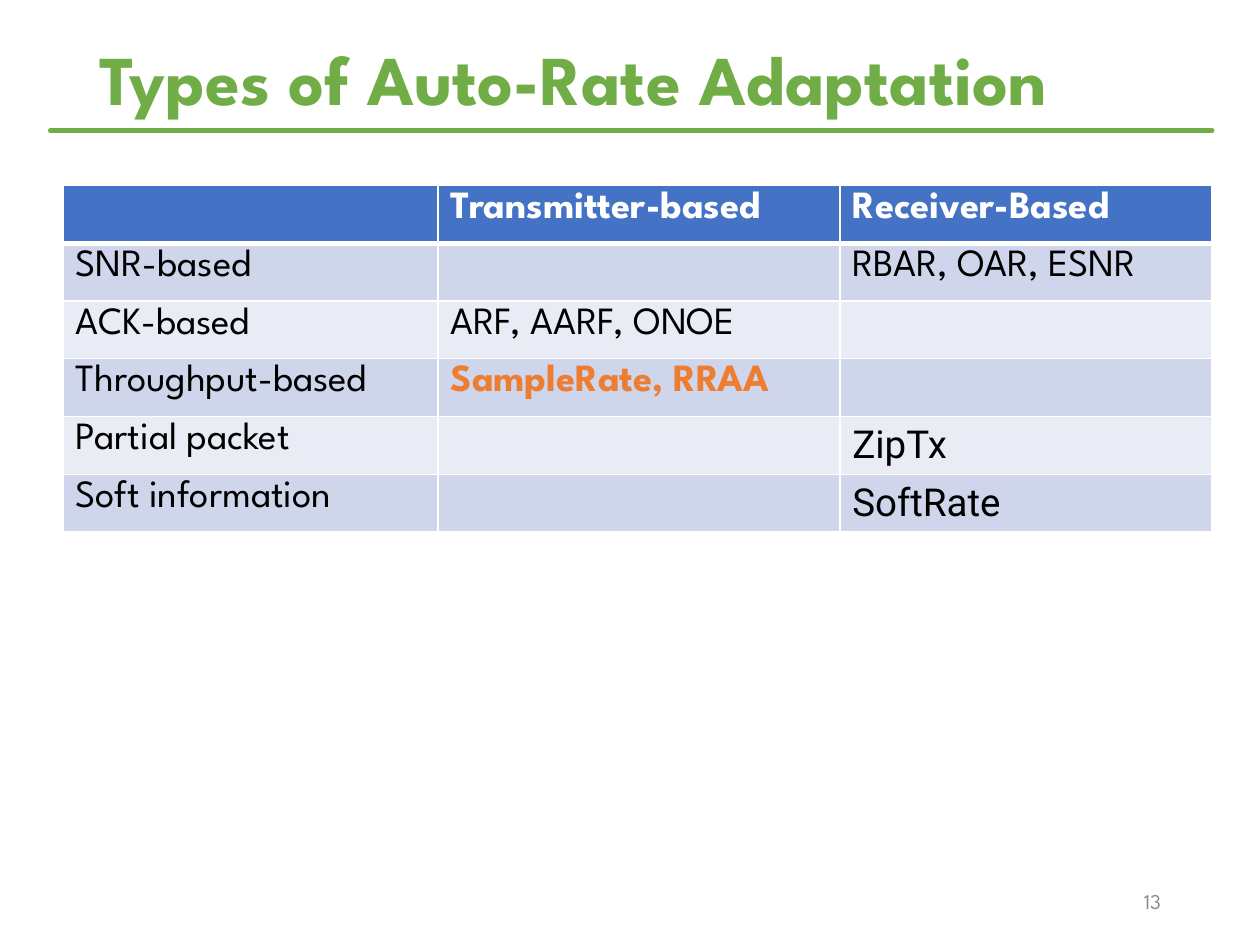
from dataclasses import dataclass

from lxml.etree import SubElement
from pptx import Presentation
from pptx.dml.color import RGBColor
from pptx.enum.shapes import MSO_CONNECTOR
from pptx.enum.text import MSO_ANCHOR, PP_ALIGN
from pptx.oxml.ns import qn
from pptx.util import Pt

HUES = {
    "green": "70AD47", "blue": "4472C4", "dark": "CFD5EA", "light": "E9EBF5",
    "white": "FFFFFF", "black": "000000", "orange": "ED7D31", "gray": "8C8C8C",
}
FONT = "League Spartan"
WIDTHS = (214.4, 229.5, 212.8)
ROW = 33


@dataclass
class Entry:
    text: str = ""
    hue: str = "black"
    bold: bool = False
    font: str = FONT


def color(hue: str) -> RGBColor:
    return RGBColor.from_string(HUES[hue])


def write(frame, text: str, *, size: float, hue: str = "black",
          bold: bool = False, font: str = FONT, align=PP_ALIGN.LEFT,
          space: float = 1.0) -> None:
    frame.word_wrap = True
    para = frame.paragraphs[0]
    para.alignment = align
    para.line_spacing = space
    run = para.add_run()
    run.text = text
    run.font.size = Pt(size)
    run.font.name = font
    run.font.bold = bold
    run.font.color.rgb = color(hue)


def edge(cell, side: str, width: float) -> None:
    line = SubElement(cell._tc.get_or_add_tcPr(), qn(f"a:ln{side}"),
                      w=str(int(Pt(width))))
    fill = SubElement(line, qn("a:solidFill"))
    SubElement(fill, qn("a:srgbClr"), val=HUES["white"])


def paint(cell, entry: Entry, row: int) -> None:
    for side in "LRTB":
        # A thick rule parts the header from the body
        thick = (row, side) in ((0, "B"), (1, "T"))
        edge(cell, side, 3 if thick else 1)
    cell.fill.solid()
    cell.fill.fore_color.rgb = color(
        "blue" if row == 0 else "dark" if row % 2 else "light")
    if entry.text:
        write(cell.text_frame, entry.text, size=22, hue=entry.hue,
              bold=entry.bold, font=entry.font)


def head(text: str) -> Entry:
    return Entry(text, "white", True)


ROWS = (
    (Entry(), head("Transmitter-based"), head("Receiver-Based")),
    (Entry("SNR-based"), Entry(), Entry("RBAR, OAR, ESNR")),
    (Entry("ACK-based"), Entry("ARF, AARF, ONOE"), Entry()),
    (Entry("Throughput-based"), Entry("SampleRate, RRAA", "orange", True), Entry()),
    (Entry("Partial packet"), Entry(), Entry("ZipTx", font="Roboto")),
    (Entry("Soft information"), Entry(), Entry("SoftRate", font="Roboto")),
)


def main() -> None:
    deck = Presentation()
    deck.slide_width, deck.slide_height = Pt(720), Pt(540)
    slide = deck.slides.add_slide(deck.slide_layouts[5])

    # Title
    title = slide.shapes.title
    title.left, title.top = Pt(49.7), Pt(20.9)
    title.width, title.height = Pt(620.6), Pt(53.3)
    title.text_frame.vertical_anchor = MSO_ANCHOR.MIDDLE
    write(title.text_frame, "Types of Auto-Rate Adaptation", size=40,
          hue="green", bold=True, space=0.9)

    # Rule below the title
    rule = slide.shapes.add_connector(
        MSO_CONNECTOR.STRAIGHT, Pt(28.8), Pt(74.6), Pt(692.6), Pt(74.6))
    rule.line.color.rgb = color("green")
    rule.line.width = Pt(2.75)
    rule.line._get_or_add_ln().set("cap", "rnd")
    SubElement(rule._element.spPr, qn("a:effectLst"))

    # Table
    table = slide.shapes.add_table(
        len(ROWS), len(WIDTHS), Pt(36), Pt(106), Pt(sum(WIDTHS)),
        Pt(ROW * len(ROWS))).table
    for col, width in zip(table.columns, WIDTHS):
        col.width = Pt(width)
    for r, row in enumerate(ROWS):
        table.rows[r].height = Pt(ROW)
        for c, entry in enumerate(row):
            paint(table.cell(r, c), entry, r)

    # Page number
    page = slide.shapes.add_textbox(Pt(508.5), Pt(500.5), Pt(162), Pt(28.8))
    page.text_frame.vertical_anchor = MSO_ANCHOR.MIDDLE
    write(page.text_frame, "13", size=12, hue="gray", align=PP_ALIGN.RIGHT)

    deck.save("out.pptx")


if __name__ == "__main__":
    main()
